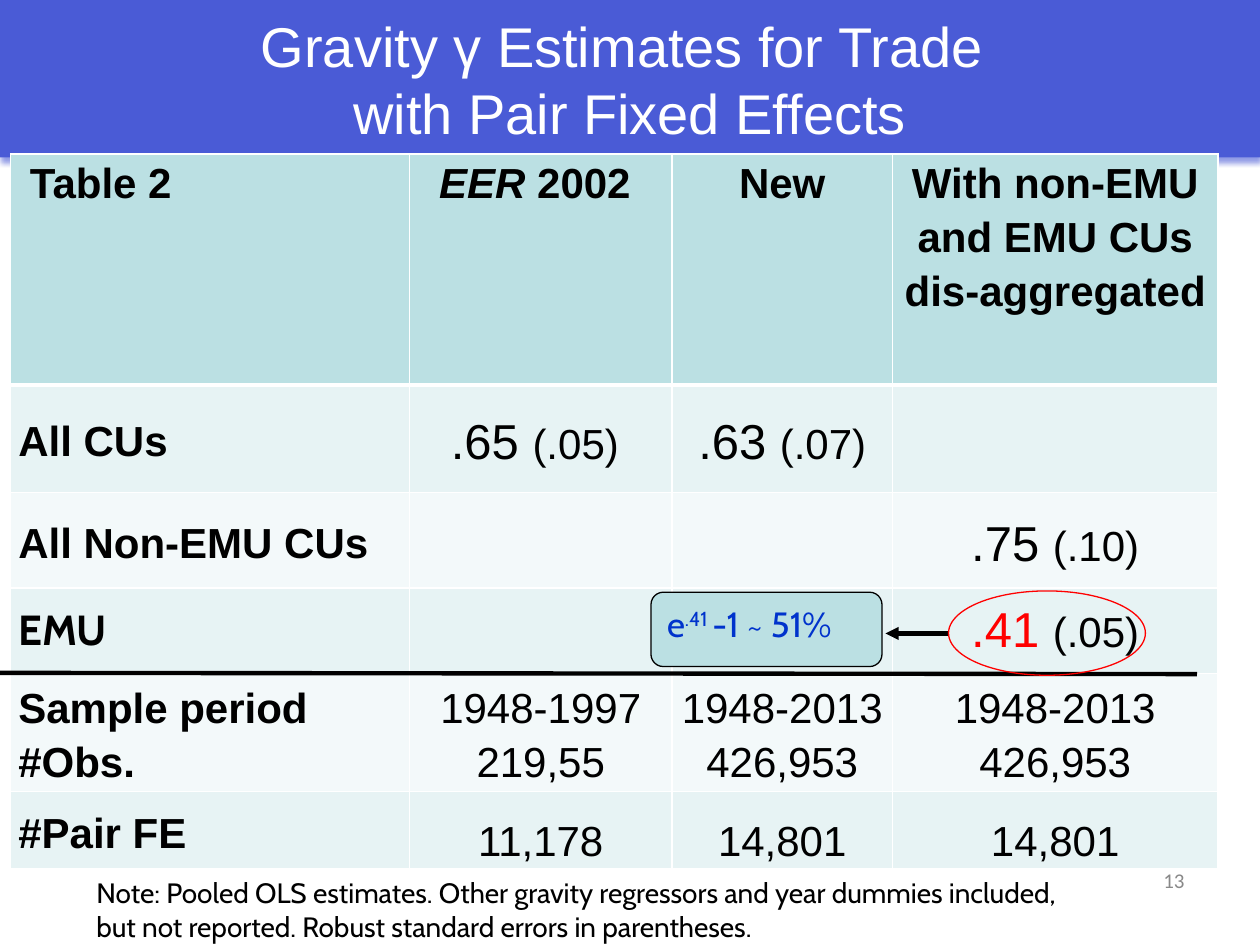
from dataclasses import dataclass

from lxml import etree
from pptx import Presentation
from pptx.dml.color import RGBColor
from pptx.enum.shapes import MSO_CONNECTOR, MSO_SHAPE
from pptx.enum.text import MSO_ANCHOR, PP_ALIGN
from pptx.oxml.ns import qn
from pptx.util import Pt

LEFT, CENTER, RIGHT = PP_ALIGN.LEFT, PP_ALIGN.CENTER, PP_ALIGN.RIGHT
TOP, MIDDLE = MSO_ANCHOR.TOP, MSO_ANCHOR.MIDDLE
ROUNDED, ELLIPSE = MSO_SHAPE.ROUNDED_RECTANGLE, MSO_SHAPE.OVAL
STRAIGHT = MSO_CONNECTOR.STRAIGHT

WHITE = RGBColor(0xFF, 0xFF, 0xFF)
BLACK = RGBColor(0, 0, 0)
RED = RGBColor(0xFF, 0, 0)
GREY = RGBColor(0x89, 0x89, 0x89)
BAND_BLUE = RGBColor(0x4A, 0x5B, 0xD6)
FORMULA_BLUE = RGBColor(0, 0x33, 0xCC)
TEAL = RGBColor(0xBB, 0xE0, 0xE3)
ROW_DARK = RGBColor(0xE7, 0xF3, 0xF4)
ROW_LIGHT = RGBColor(0xF3, 0xF9, 0xFA)


@dataclass(frozen=True)
class Span:
    text: str
    size: float = 24
    font: str = "Arial"
    color: RGBColor = BLACK
    bold: bool = False
    italic: bool = False
    raised: bool = False


@dataclass(frozen=True)
class Entry:
    lines: tuple = ()
    align: PP_ALIGN = CENTER
    spacing: float = 1.15
    margin: float = 4.5


@dataclass(frozen=True)
class Rule:
    start: tuple
    end: tuple
    arrow: bool = False


def write_lines(frame, lines, align=LEFT, spacing=1.0) -> None:
    for index, spans in enumerate(lines):
        paragraph = frame.paragraphs[0] if index == 0 else frame.add_paragraph()
        paragraph.alignment = align
        paragraph.line_spacing = spacing
        for span in spans:
            run = paragraph.add_run()
            run.text = span.text
            font = run.font
            font.size, font.name = Pt(span.size), span.font
            font.bold, font.italic = span.bold, span.italic
            font.color.rgb = span.color
            if span.raised:
                run._r.get_or_add_rPr().set("baseline", "30000")


def label(*texts: str, font: str = "Arial", spacing: float = 1.15) -> Entry:
    return Entry(tuple((Span(text, font=font, bold=True),) for text in texts), LEFT, spacing)


def heading(*spans: Span) -> Entry:
    return Entry((spans,))


def estimate(value: str, error: str, color: RGBColor = BLACK, spacing: float = 1.15) -> Entry:
    return Entry(((Span(value + " ", 28, color=color), Span(error)),), spacing=spacing)


def sample(period: str, observations: str) -> Entry:
    return Entry(((Span(period),), (Span(observations),)))


def pairs(count: str) -> Entry:
    return Entry(((Span(count),),), spacing=1.5, margin=5)


def add_borders(cell, bottom_width: float) -> None:
    properties = cell._tc.get_or_add_tcPr()
    for side, width in (("lnL", 1), ("lnR", 1), ("lnT", 1), ("lnB", bottom_width)):
        border = etree.SubElement(properties, qn(f"a:{side}"), w=str(Pt(width)))
        fill = etree.SubElement(border, qn("a:solidFill"))
        etree.SubElement(fill, qn("a:srgbClr"), val=str(WHITE))


def fill_cell(cell, entry: Entry, row: int) -> None:
    add_borders(cell, 3 if row == 0 else 1)
    cell.fill.solid()
    cell.fill.fore_color.rgb = TEAL if row == 0 else (ROW_LIGHT, ROW_DARK)[row % 2]
    cell.vertical_anchor = TOP if row == 0 else MIDDLE
    cell.margin_left = cell.margin_right = Pt(entry.margin)
    cell.margin_top = cell.margin_bottom = Pt(0)
    write_lines(cell.text_frame, entry.lines, entry.align, entry.spacing)


def add_rule(slide, rule: Rule) -> None:
    line = slide.shapes.add_connector(STRAIGHT, *map(Pt, rule.start + rule.end))
    line.line.color.rgb = BLACK
    line.line.width = Pt(2.5)
    if rule.arrow:
        etree.SubElement(line.line._get_or_add_ln(), qn("a:tailEnd"), type="triangle")
    etree.SubElement(line._element.spPr, qn("a:effectLst"))


def add_outline(slide, kind, box: tuple, color: RGBColor):
    shape = slide.shapes.add_shape(kind, *map(Pt, box))
    shape.shadow.inherit = False
    shape.fill.background()
    shape.line.color.rgb = color
    shape.line.width = Pt(0.75)
    return shape


def add_note(slide, box: tuple, span: Span, align=LEFT, anchor=TOP) -> None:
    frame = slide.shapes.add_textbox(*map(Pt, box)).text_frame
    frame.word_wrap = True
    frame.vertical_anchor = anchor
    write_lines(frame, [(span,)], align)


def add_title(slide) -> None:
    title = slide.shapes.title
    title.left, title.top, title.width, title.height = Pt(0), Pt(0), Pt(720), Pt(90)
    title.fill.solid()
    title.fill.fore_color.rgb = BAND_BLUE
    effects = etree.SubElement(title._element.spPr, qn("a:effectLst"))
    shadow = etree.SubElement(effects, qn("a:outerShdw"), blurRad=str(Pt(3)),
                              dist=str(Pt(3)), dir="5400000", rotWithShape="0")
    tint = etree.SubElement(shadow, qn("a:srgbClr"), val=str(BAND_BLUE))
    etree.SubElement(tint, qn("a:alpha"), val="60000")
    title.text_frame.vertical_anchor = MIDDLE
    paragraph = title.text_frame.paragraphs[0]
    write_lines(title.text_frame, [(Span("Gravity γ Estimates for Trade ", 32, color=WHITE),)], CENTER)
    paragraph.add_line_break()
    write_lines(title.text_frame, [(Span("with Pair Fixed Effects", 32, color=WHITE),)], CENTER)


COLUMN_WIDTHS = (228, 150, 126, 186)
ROW_HEIGHTS = (132, 61.5, 54.5, 49, 67.5, 44)
BLANK = Entry()
ESTIMATES = (
    (Entry(((Span(" Table 2", bold=True),),), LEFT),
     heading(Span("EER", bold=True, italic=True), Span(" 2002 ", bold=True)),
     heading(Span("New", bold=True)),
     heading(Span("With non-EMU and EMU CUs dis-aggregated ", bold=True))),
    (label("All CUs"), estimate(".65", "(.05) "), estimate(".63", "(.07)"), BLANK),
    (label("All Non-EMU CUs"), BLANK, BLANK, estimate(".75", "(.10)")),
    (label("EMU", font="Cabin", spacing=1), BLANK, BLANK, estimate(".41", "(.05)", RED, 1)),
    (label("Sample period", "#Obs."), sample("1948-1997", "219,55"),
     sample("1948-2013", "426,953"), sample("1948-2013", "426,953")),
    (label("#Pair FE"), pairs("11,178"), pairs("14,801"), pairs("14,801")),
)


def add_estimates(slide) -> None:
    table = slide.shapes.add_table(len(ROW_HEIGHTS), len(COLUMN_WIDTHS), Pt(6), Pt(88),
                                   Pt(sum(COLUMN_WIDTHS)), Pt(sum(ROW_HEIGHTS))).table
    for column, width in zip(table.columns, COLUMN_WIDTHS):
        column.width = Pt(width)
    for row, height in zip(table.rows, ROW_HEIGHTS):
        row.height = Pt(height)
    for row, entries in enumerate(ESTIMATES):
        for column, entry in enumerate(entries):
            fill_cell(table.cell(row, column), entry, row)


def main() -> None:
    deck = Presentation()
    deck.slide_width, deck.slide_height = Pt(720), Pt(540)
    slide = deck.slides.add_slide(deck.slide_layouts[5])
    add_title(slide)
    add_estimates(slide)
    add_note(slide, (516, 492, 168, 37.5), Span("13", 12, "Calibri", GREY), RIGHT)
    add_note(slide, (48, 497, 588, 65.5), Span(
        "Note: Pooled OLS estimates. Other gravity regressors and year dummies included, "
        "but not reported. Robust standard errors in parentheses.", 16, "Cabin"))
    add_rule(slide, Rule((0, 384.5), (684, 385.2)))
    formula = add_outline(slide, ROUNDED, (372, 338.4, 132, 42.5), BLACK)
    formula.fill.solid()
    formula.fill.fore_color.rgb = TEAL
    formula.text_frame.word_wrap = False
    formula.text_frame.vertical_anchor = TOP
    write_lines(formula.text_frame, [(
        Span("e", 20, "Cabin", FORMULA_BLUE),
        Span(".41 ", 20, "Cabin", FORMULA_BLUE, raised=True),
        Span("-1 ~ 51%", 20, "Cabin", FORMULA_BLUE))])
    add_rule(slide, Rule((542, 362), (506, 362), arrow=True))
    add_outline(slide, ELLIPSE, (542, 337.7, 112.5, 48.2), RED)
    deck.save("out.pptx")


if __name__ == "__main__":
    main()
